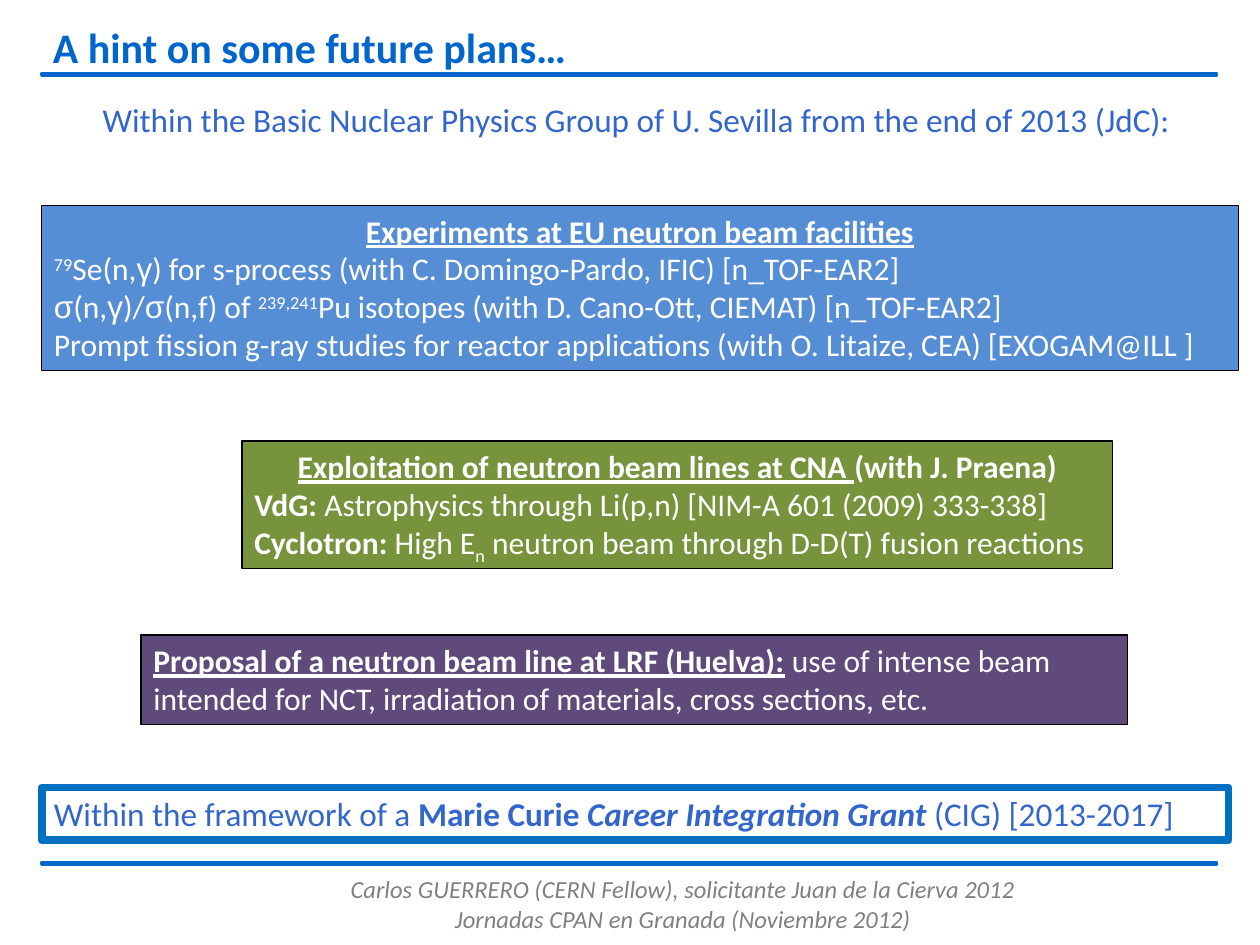
from pptx import Presentation
from pptx import util as u
from pptx.dml.color import RGBColor
from pptx.enum import shapes, text

BLUE = RGBColor(0x00, 0x66, 0xCC)
TEXT_BLUE = RGBColor(0x33, 0x66, 0xCC)
FRAME_BLUE = RGBColor(0x00, 0x70, 0xC0)
SKY = RGBColor(0x55, 0x8E, 0xD5)
GREEN = RGBColor(0x77, 0x93, 0x3C)
PURPLE = RGBColor(0x60, 0x4A, 0x7B)
GREY = RGBColor(0x80, 0x80, 0x80)
BLACK = RGBColor(0, 0, 0)
WHITE = RGBColor(0xFF, 0xFF, 0xFF)

LEFT, CENTER = text.PP_ALIGN.LEFT, text.PP_ALIGN.CENTER
COLUMNS, ROWS = 100, 75

HEADING = dict(bold=True, underline=True)
BOLD = dict(bold=True)
GREEK = dict(font="Arial")
SUPER = dict(baseline=30)
SUB = dict(baseline=-25)


def add_run(paragraph, content, size=18, color=WHITE, font="Calibri",
            bold=False, italic=False, underline=False, baseline=0):
    run = paragraph.add_run()
    run.text = content
    run.font.size = u.Pt(size)
    run.font.color.rgb = color
    run.font.name = font
    run.font.bold, run.font.italic, run.font.underline = bold, italic, underline
    if baseline:
        run._r.get_or_add_rPr().set("baseline", str(baseline * 1000))


class PlanSlide:
    """Style and current slide; lengths are columns and rows of a 100 x 75 grid."""

    def __init__(self, presentation):
        self.column = presentation.slide_width / COLUMNS
        self.row = presentation.slide_height / ROWS
        self.slide = presentation.slides.add_slide(presentation.slide_layouts[5])

    def place(self, left, top, width, height):
        return (round(left * self.column), round(top * self.row),
                round(width * self.column), round(height * self.row))

    def fill_text(self, shape, paragraphs, margins=(0.1, 0.05, 0.1, 0.05), **style):
        """Fill a shape with (alignment, runs); a run is a string or (string, format)."""
        frame = shape.text_frame
        frame.word_wrap = True
        frame.auto_size = text.MSO_AUTO_SIZE.NONE
        frame.vertical_anchor = text.MSO_ANCHOR.TOP
        (frame.margin_left, frame.margin_top,
         frame.margin_right, frame.margin_bottom) = map(u.Inches, margins)
        for index, (alignment, runs) in enumerate(paragraphs):
            paragraph = frame.add_paragraph() if index else frame.paragraphs[0]
            paragraph.alignment = alignment
            for run in runs:
                content, changes = (run, {}) if isinstance(run, str) else run
                add_run(paragraph, content, **{**style, **changes})

    def title(self, content, area):
        shape = self.slide.shapes.title
        shape.left, shape.top, shape.width, shape.height = self.place(*area)
        self.fill_text(shape, [(LEFT, [content])], (0.09, 0.04, 0.09, 0.04),
                       size=24, color=BLUE, bold=True)
        shape.text_frame.paragraphs[0].line_spacing = 0.93

    def label(self, paragraphs, area, **style):
        shape = self.slide.shapes.add_textbox(*self.place(*area))
        self.fill_text(shape, paragraphs, **style)

    def box(self, area, fill=None, line=BLACK, line_width=0.75, paragraphs=(), **style):
        shape = self.slide.shapes.add_shape(
            shapes.MSO_SHAPE.RECTANGLE, *self.place(*area))
        shape.shadow.inherit = False
        if fill is None:
            shape.fill.background()
        else:
            shape.fill.solid()
            shape.fill.fore_color.rgb = fill
        shape.line.color.rgb = line
        shape.line.width = u.Pt(line_width)
        self.fill_text(shape, paragraphs, **style)

    def rule(self, top):
        self.box((3.3, top, 93.3, 0.2), BLUE, BLUE, 1.5)


def main():
    presentation = Presentation()
    presentation.slide_width, presentation.slide_height = u.Inches(10), u.Inches(7.5)
    plan = PlanSlide(presentation)

    for top in (5.8, 68.4):
        plan.rule(top)
    plan.title("A hint on some future plans…", (3.3, 1.7, 93.7, 4.2))
    plan.label([(CENTER, ["Within the Basic Nuclear Physics Group of U. Sevilla "
                          "from the end of 2013 (JdC):"])],
               (3.4, 7.4, 94.2, 4.2), size=19, color=TEXT_BLUE)

    plan.box((3.3, 16.3, 95, 13.1), SKY, paragraphs=[
        (CENTER, [("Experiments at EU neutron beam facilities", HEADING)]),
        (LEFT, [("79", SUPER), "Se(n,", ("γ", GREEK),
                ") for s-process (with C. Domingo-Pardo, IFIC) [n_TOF-EAR2]"]),
        (LEFT, [("σ", GREEK), "(n,", ("γ", GREEK), ")/", ("σ", GREEK), "(n,f) of ",
                ("239,241", SUPER),
                "Pu isotopes (with D. Cano-Ott, CIEMAT) [n_TOF-EAR2]"]),
        (LEFT, ["Prompt fission g-ray studies for reactor applications "
                "(with O. Litaize, CEA) [EXOGAM@ILL ]"]),
    ])
    plan.box((19.2, 35, 69.1, 10.1), GREEN, paragraphs=[
        (CENTER, [("Exploitation of neutron beam lines at CNA ", HEADING),
                  ("(with J. Praena)", BOLD)]),
        (LEFT, [("VdG:", BOLD),
                " Astrophysics through Li(p,n) [NIM-A 601 (2009) 333-338]"]),
        (LEFT, [("Cyclotron:", BOLD), " High E", ("n", SUB),
                " neutron beam through D-D(T) fusion reactions"]),
    ])
    plan.box((11.2, 50.4, 78.3, 7.1), PURPLE, paragraphs=[
        (LEFT, [("Proposal of a neutron beam line at LRF (Huelva):", HEADING),
                " use of intense beam intended for NCT, "
                "irradiation of materials, cross sections, etc."]),
    ])
    plan.box((3.3, 62.5, 94.2, 4.2), line=FRAME_BLUE, line_width=4.5, paragraphs=[
        (LEFT, ["Within the framework of a ", ("Marie Curie ", BOLD),
                ("Career Integration Grant", dict(bold=True, italic=True)),
                " (CIG) [2013-2017]"]),
    ], size=19, color=TEXT_BLUE)

    plan.label([(CENTER, ["Carlos GUERRERO (CERN Fellow), "
                          "solicitante Juan de la Cierva 2012"]),
                (CENTER, ["Jornadas CPAN en Granada (Noviembre 2012)"])],
               (14.2, 68.9, 80, 6.2), margins=(0.1, 0.05, 0.1, 0.1),
               size=14, color=GREY, italic=True)
    presentation.save("out.pptx")


if __name__ == "__main__":
    main()
